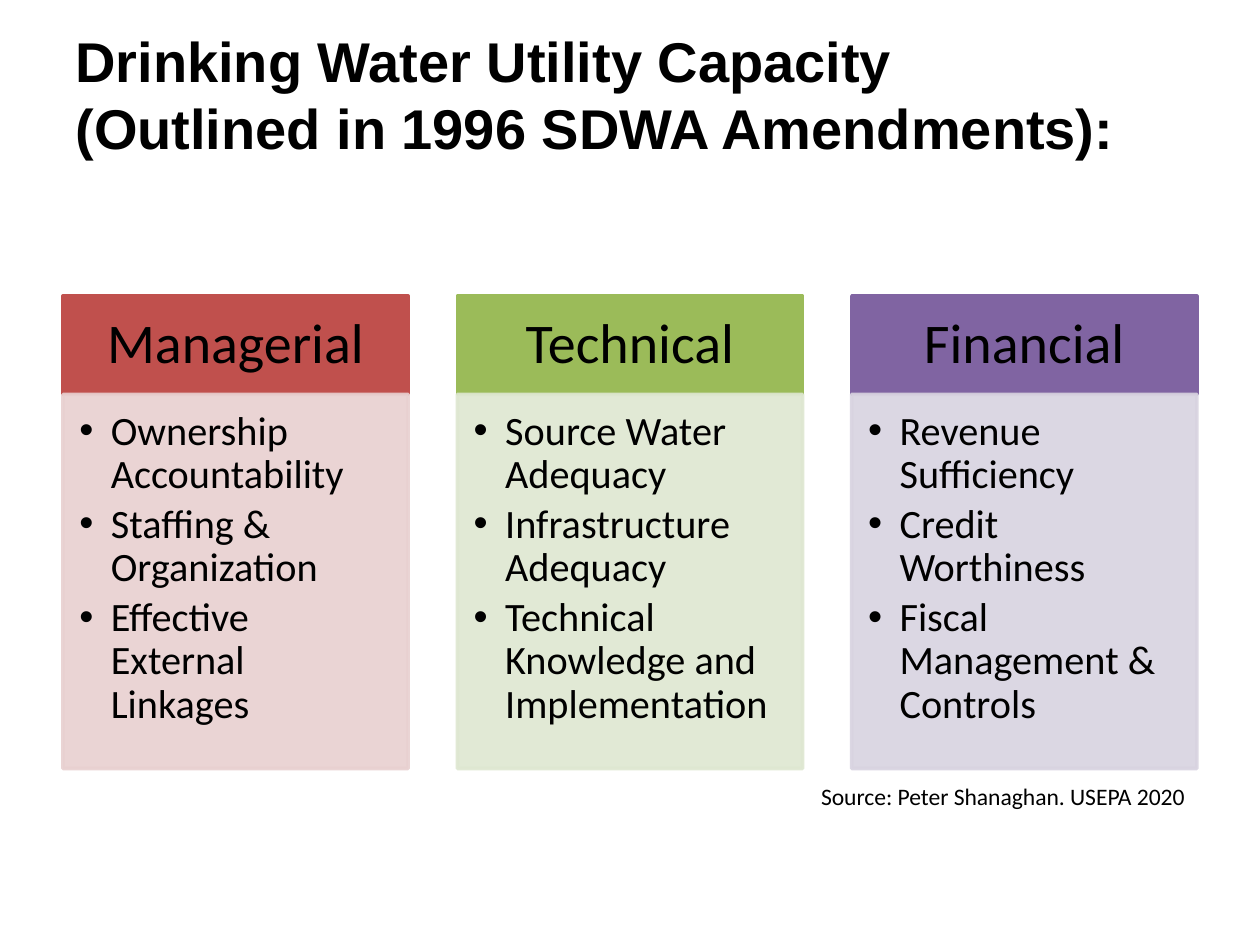
import pptx
import pptx.dml.color
import pptx.enum.shapes
import pptx.enum.text
import pptx.oxml
import pptx.oxml.ns
import pptx.util
from pptx.util import Inches

ALIGN = pptx.enum.text.PP_ALIGN
ANCHOR = pptx.enum.text.MSO_ANCHOR
DRAWING_NS = pptx.oxml.ns.nsdecls("a")

COLUMNS = [
    ("Managerial", "C0504D", "E8D0D0",
     ["Ownership Accountability", "Staffing & Organization",
      "Effective External Linkages"]),
    ("Technical", "9BBB59", "DEE7D1",
     ["Source Water Adequacy", "Infrastructure Adequacy",
      "Technical Knowledge and Implementation"]),
    ("Financial", "8064A2", "D8D3E0",
     ["Revenue Sufficiency", "Credit Worthiness",
      "Fiscal Management & Controls"]),
]


def color(hex_string):
    return pptx.dml.color.RGBColor.from_string(hex_string)


def set_frame(shape, margins, anchor):
    frame = shape.text_frame
    frame.word_wrap = True
    frame.vertical_anchor = anchor
    (frame.margin_left, frame.margin_top,
     frame.margin_right, frame.margin_bottom) = map(Inches, margins)
    return frame


def style_paragraph(paragraph, text, size, align, font="Calibri", bold=False):
    paragraph.text = text
    paragraph.alignment = align
    paragraph.font.name = font
    paragraph.font.size = pptx.util.Pt(size)
    paragraph.font.bold = bold
    paragraph.font.color.rgb = color("000000")


def add_bullet(paragraph):
    properties = paragraph._p.get_or_add_pPr()
    properties.set("marL", str(Inches(0.25)))
    properties.set("indent", str(Inches(-0.25)))
    properties.append(pptx.oxml.parse_xml(f'<a:buFont {DRAWING_NS} typeface="Arial"/>'))
    properties.append(pptx.oxml.parse_xml(f'<a:buChar {DRAWING_NS} char="•"/>'))


def add_panel(slide, box, fill, opacity=100):
    shape = slide.shapes.add_shape(
        pptx.enum.shapes.MSO_SHAPE.RECTANGLE, *map(Inches, box))
    shape.shadow.inherit = False
    shape.fill.solid()
    shape.fill.fore_color.rgb = color(fill)
    shape.line.color.rgb = color(fill)
    shape.line.width = pptx.util.Pt(2)
    if opacity < 100:
        for node in shape._element.spPr.iter(pptx.oxml.ns.qn("a:srgbClr")):
            node.append(pptx.oxml.parse_xml(
                f'<a:alpha {DRAWING_NS} val="{opacity * 1000}"/>'))
    return shape


def add_text(slide, box, text, size, align, anchor, **font):
    shape = slide.shapes.add_textbox(*map(Inches, box))
    frame = set_frame(shape, (0.1, 0.05, 0.1, 0.05), anchor)
    style_paragraph(frame.paragraphs[0], text, size, align, **font)


def add_column(slide, box, heading, dark, light, items):
    left, top, width, height = box
    heading_height = 0.78

    # Heading
    header = add_panel(slide, (left, top, width, heading_height), dark)
    frame = set_frame(header, (0.25, 0.14, 0.25, 0.14), ANCHOR.MIDDLE)
    style_paragraph(frame.paragraphs[0], heading, 32, ALIGN.CENTER)
    frame.paragraphs[0].line_spacing = 0.9

    # Bulleted body
    body = add_panel(slide, (left, top + heading_height, width,
                             height - heading_height), light, opacity=90)
    frame = set_frame(body, (0.13, 0.13, 0.18, 0.2), ANCHOR.TOP)
    for index, item in enumerate(items):
        paragraph = frame.add_paragraph() if index else frame.paragraphs[0]
        style_paragraph(paragraph, item, 23, ALIGN.LEFT)
        paragraph.line_spacing = 0.9
        paragraph.space_after = pptx.util.Pt(3.5)
        add_bullet(paragraph)


def add_columns(slide, box):
    left, top, width, height = box
    column_width = 2.74
    step = (width - column_width) / (len(COLUMNS) - 1)
    for index, column in enumerate(COLUMNS):
        add_column(slide, (left + index * step, top, column_width, height), *column)


def main():
    presentation = pptx.Presentation()
    presentation.slide_width = Inches(10)
    presentation.slide_height = Inches(7.5)
    slide = presentation.slides.add_slide(presentation.slide_layouts[6])

    # Title
    add_text(slide, (0.5, 0.12, 9, 1.25),
             "Drinking Water Utility Capacity\v(Outlined in 1996 SDWA Amendments):",
             32, ALIGN.LEFT, ANCHOR.MIDDLE, font="Arial", bold=True)
    # Capacity columns
    add_columns(slide, (0.5, 2.35, 9, 3.75))
    # Source note
    add_text(slide, (6.35, 6.16, 3.15, 0.33),
             "Source: Peter Shanaghan. USEPA 2020", 13.5, ALIGN.RIGHT, ANCHOR.TOP)

    presentation.save("out.pptx")


if __name__ == "__main__":
    main()
